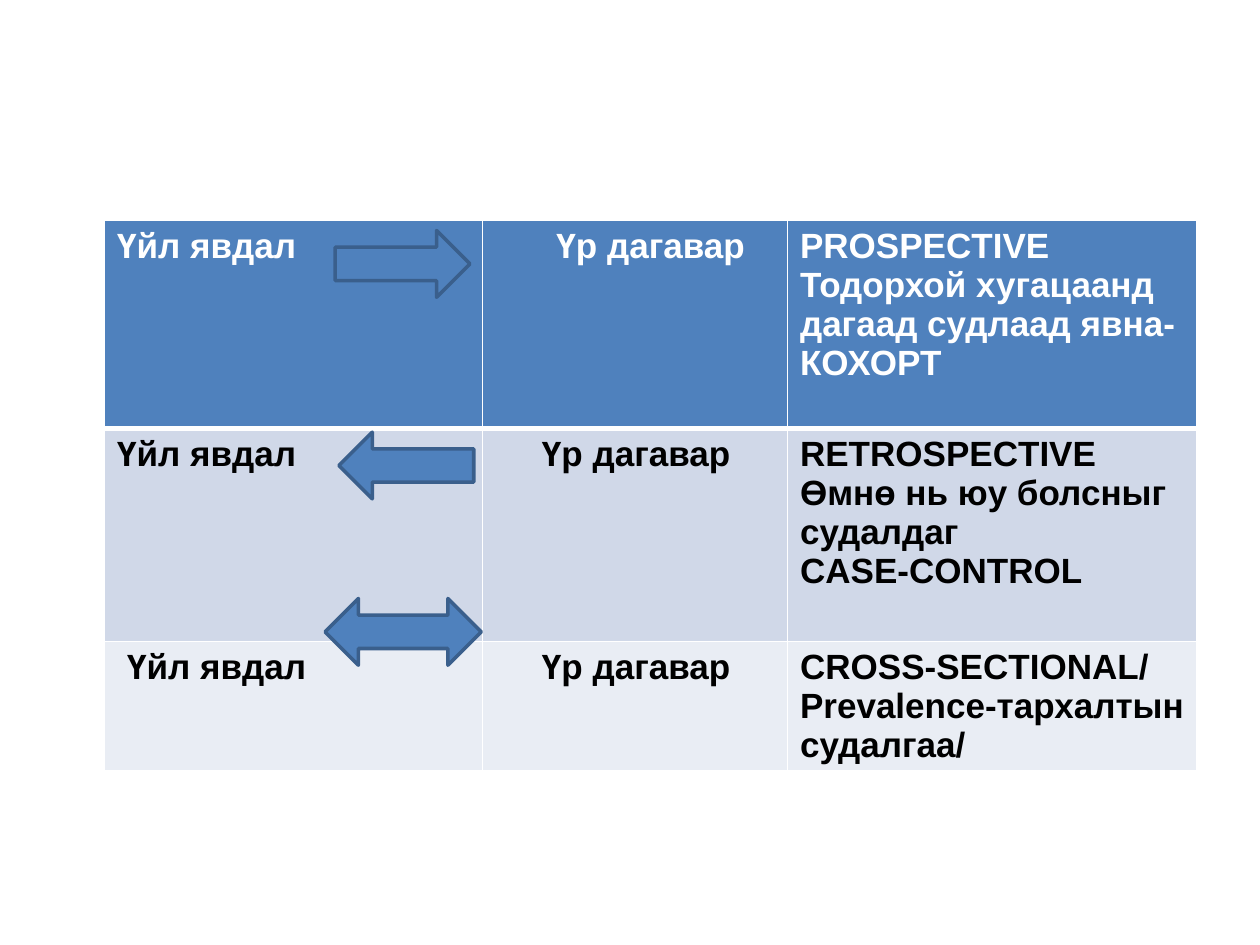
from lxml import etree
from pptx import Presentation
from pptx import util as u
from pptx.dml.color import RGBColor
from pptx.enum import shapes, text
from pptx.oxml.ns import qn

WHITE, BLACK, BLUE, DARK_BLUE = "FFFFFF", "000000", "4F81BD", "3A5F8C"
COLUMNS = [3, 2.42, 3.25]
ROWS = [1.65, 1.69, 1.03]
ROW_STYLES = [(BLUE, WHITE), ("D0D8E8", BLACK), ("E9EDF4", BLACK)]
CELLS = [
    ["Үйл явдал", "Үр дагавар",
     "PROSPECTIVE\nТодорхой хугацаанд дагаад судлаад явна-КОХОРТ"],
    ["Үйл явдал", "Үр дагавар",
     "RETROSPECTIVE\nӨмнө нь юу болсныг судалдаг\nCASE-CONTROL"],
    ["Үйл явдал", "Үр дагавар",
     "CROSS-SECTIONAL/Prevalence-тархалтын судалгаа/"],
]
INDENTS = {(0, 1): 0.23, (2, 0): 0.08}
ARROW_HEIGHT = 0.53
# Preset, offset from the table's left and top, width
ARROWS = [
    (shapes.MSO_SHAPE.RIGHT_ARROW, 1.83, 0.08, 1.07),
    (shapes.MSO_SHAPE.LEFT_ARROW, 1.86, 1.68, 1.07),
    (shapes.MSO_SHAPE.LEFT_RIGHT_ARROW, 1.75, 3, 1.24),
]


def color(value):
    return RGBColor.from_string(value)


def set_borders(cell, widths):
    """Draw white borders; widths maps a side (L, R, T, B) to points."""
    properties = cell._tc.get_or_add_tcPr()
    for position, (side, width) in enumerate(widths.items()):
        line = etree.Element(qn(f"a:ln{side}"), w=str(u.Pt(width)))
        fill = etree.SubElement(line, qn("a:solidFill"))
        etree.SubElement(fill, qn("a:srgbClr"), val=WHITE)
        properties.insert(position, line)


def format_cell(cell, content, fill, font_color, centered, indent):
    cell.fill.solid()
    cell.fill.fore_color.rgb = color(fill)
    cell.margin_left = u.Inches(0.1 + indent)
    cell.margin_right = u.Inches(0.08)
    cell.text_frame.text = content
    for paragraph in cell.text_frame.paragraphs:
        if centered:
            paragraph.alignment = text.PP_ALIGN.CENTER
        for run in paragraph.runs:
            run.font.name = "Arial"
            run.font.size = u.Pt(20)
            run.font.bold = True
            run.font.color.rgb = color(font_color)


def add_study_table(slide, left, top):
    table = slide.shapes.add_table(
        len(ROWS), len(COLUMNS), u.Inches(left), u.Inches(top),
        u.Inches(sum(COLUMNS)), u.Inches(sum(ROWS))).table
    for column, width in zip(table.columns, COLUMNS):
        column.width = u.Inches(width)
    for row, height in zip(table.rows, ROWS):
        row.height = u.Inches(height)
    for i, (contents, (fill, font_color)) in enumerate(zip(CELLS, ROW_STYLES)):
        for j, content in enumerate(contents):
            cell = table.cell(i, j)
            format_cell(cell, content, fill, font_color, j == 1,
                        INDENTS.get((i, j), 0))
            set_borders(cell, {"L": 1, "R": 1, "T": 3 if i == 1 else 1,
                               "B": 3 if i == 0 else 1})


def add_direction_arrows(slide, left, top):
    for preset, x, y, width in ARROWS:
        arrow = slide.shapes.add_shape(
            preset, u.Inches(left + x), u.Inches(top + y),
            u.Inches(width), u.Inches(ARROW_HEIGHT))
        arrow.shadow.inherit = False
        arrow.fill.solid()
        arrow.fill.fore_color.rgb = color(BLUE)
        arrow.line.color.rgb = color(DARK_BLUE)
        arrow.line.width = u.Pt(2)


def main():
    presentation = Presentation()
    presentation.slide_width = u.Inches(10)
    presentation.slide_height = u.Inches(7.5)
    slide = presentation.slides.add_slide(presentation.slide_layouts[6])
    left, top = 0.83, 1.75
    add_study_table(slide, left, top)
    add_direction_arrows(slide, left, top)
    presentation.save("out.pptx")


if __name__ == "__main__":
    main()
